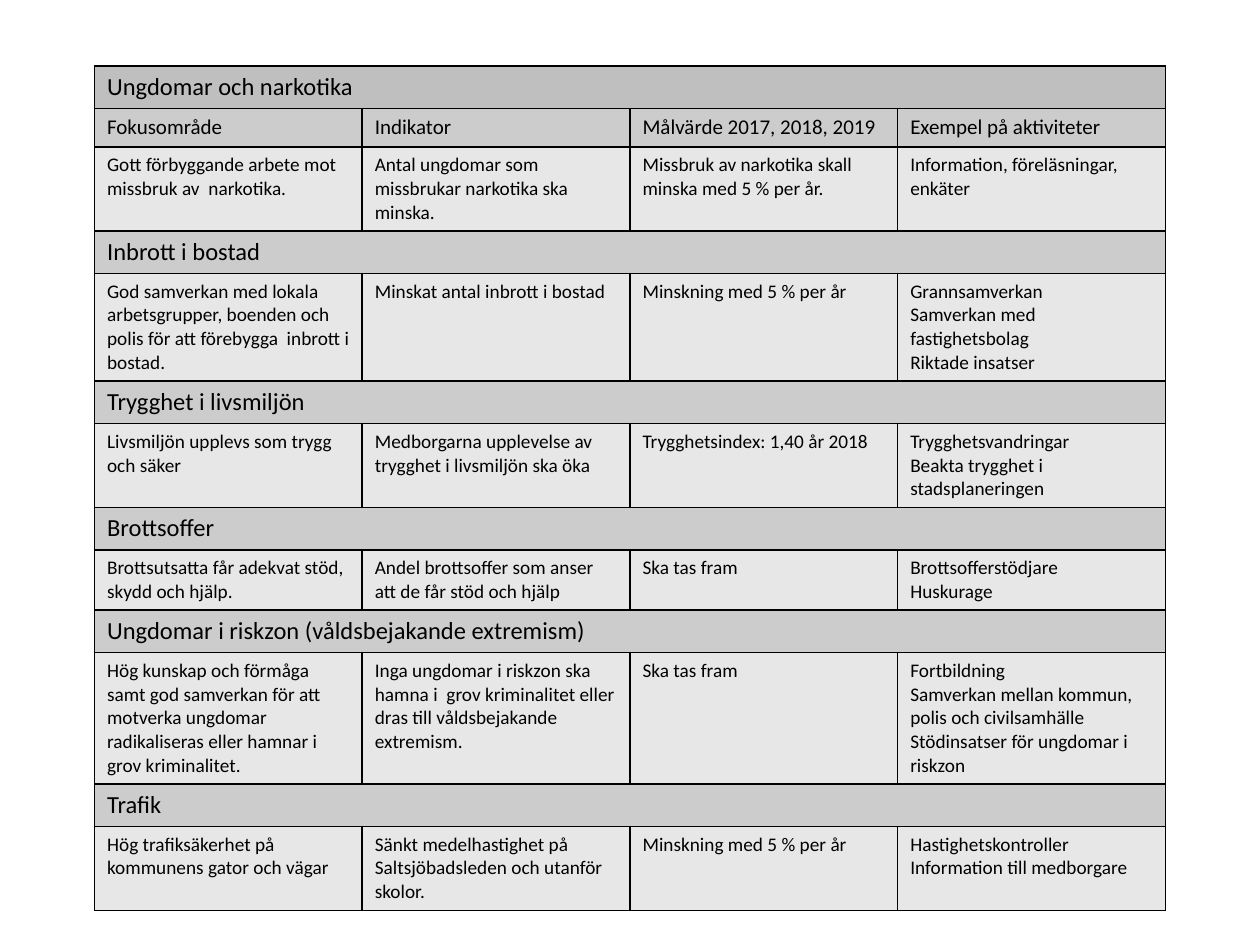
import pptx
import pptx.dml.color
import pptx.oxml
import pptx.oxml.ns
import pptx.util

theme = {
    "font": "Calibri",
    "ink": "000000",
    "border": 1,
    "title": {"size": 14, "fill": "BFBFBF", "height": 0.3},
    "section": {"size": 14, "fill": "CCCCCC", "height": 0.3},
    "labels": {"size": 12, "fill": "CCCCCC", "height": 0.3},
    "detail": {"size": 11, "fill": "E7E7E7", "height": 0.41},
}

rows = [
    ("title", ["Ungdomar och narkotika"]),
    ("labels", ["Fokusområde", "Indikator", "Målvärde 2017, 2018, 2019", "Exempel på aktiviteter"]),
    ("detail", [
        "Gott förbyggande arbete mot missbruk av  narkotika.",
        "Antal ungdomar som missbrukar narkotika ska minska.",
        "Missbruk av narkotika skall minska med 5 % per år.",
        "Information, föreläsningar, enkäter",
    ]),
    ("section", ["Inbrott i bostad"]),
    ("detail", [
        "God samverkan med lokala arbetsgrupper, boenden och polis för att förebygga  inbrott i bostad.",
        "Minskat antal inbrott i bostad",
        "Minskning med 5 % per år",
        "Grannsamverkan\nSamverkan med fastighetsbolag\nRiktade insatser",
    ]),
    ("section", ["Trygghet i livsmiljön"]),
    ("detail", [
        "Livsmiljön upplevs som trygg och säker",
        "Medborgarna upplevelse av trygghet i livsmiljön ska öka",
        "Trygghetsindex: 1,40 år 2018",
        "Trygghetsvandringar\nBeakta trygghet i stadsplaneringen",
    ]),
    ("section", ["Brottsoffer"]),
    ("detail", [
        "Brottsutsatta får adekvat stöd, skydd och hjälp.",
        "Andel brottsoffer som anser att de får stöd och hjälp",
        "Ska tas fram",
        "Brottsofferstödjare\nHuskurage",
    ]),
    ("section", ["Ungdomar i riskzon (våldsbejakande extremism)"]),
    ("detail", [
        "Hög kunskap och förmåga samt god samverkan för att motverka ungdomar radikaliseras eller hamnar i grov kriminalitet.",
        "Inga ungdomar i riskzon ska hamna i  grov kriminalitet eller dras till våldsbejakande extremism.",
        "Ska tas fram",
        "Fortbildning\nSamverkan mellan kommun, polis och civilsamhälle\nStödinsatser för ungdomar i riskzon",
    ]),
    ("section", ["Trafik"]),
    ("detail", [
        "Hög trafiksäkerhet på kommunens gator och vägar",
        "Sänkt medelhastighet på Saltsjöbadsleden och utanför skolor.",
        "Minskning med 5 % per år",
        "Hastighetskontroller\nInformation till medborgare",
    ]),
]
column_count = 4


def add_borders(cell):
    properties = cell._tc.get_or_add_tcPr()
    for position, side in enumerate(("lnL", "lnR", "lnT", "lnB")):
        line = pptx.oxml.parse_xml(
            f'<a:{side} {pptx.oxml.ns.nsdecls("a")} w="{pptx.util.Pt(theme["border"])}">'
            f'<a:solidFill><a:srgbClr val="{theme["ink"]}"/></a:solidFill></a:{side}>'
        )
        properties.insert(position, line)


presentation = pptx.Presentation()
presentation.slide_width = pptx.util.Inches(10)
presentation.slide_height = pptx.util.Inches(7.5)
slide = presentation.slides.add_slide(presentation.slide_layouts[6])

left = int(presentation.slide_width * 0.075)
top = int(presentation.slide_height * 0.07)
width = presentation.slide_width - 2 * left
height = int(presentation.slide_height * 0.88)
shape = slide.shapes.add_table(len(rows), column_count, left, top, width, height)
table = shape.table
for name, value in {"first_row": False, "horz_banding": False}.items():
    setattr(table, name, value)
for column in table.columns:
    column.width = width // column_count

for row_index, (role, texts) in enumerate(rows):
    style = theme[role]
    table.rows[row_index].height = pptx.util.Inches(style["height"])
    if len(texts) == 1:
        table.cell(row_index, 0).merge(table.cell(row_index, column_count - 1))
    for cell in table.rows[row_index].cells:
        cell.fill.solid()
        cell.fill.fore_color.rgb = pptx.dml.color.RGBColor.from_string(style["fill"])
        add_borders(cell)
    font_values = {"name": theme["font"], "size": pptx.util.Pt(style["size"]), "bold": False}
    for column_index, text in enumerate(texts):
        cell = table.cell(row_index, column_index)
        cell.text = text
        for paragraph in cell.text_frame.paragraphs:
            for run in paragraph.runs:
                for name, value in font_values.items():
                    setattr(run.font, name, value)
                run.font.color.rgb = pptx.dml.color.RGBColor.from_string(theme["ink"])
shape.height = height

presentation.save("out.pptx")
